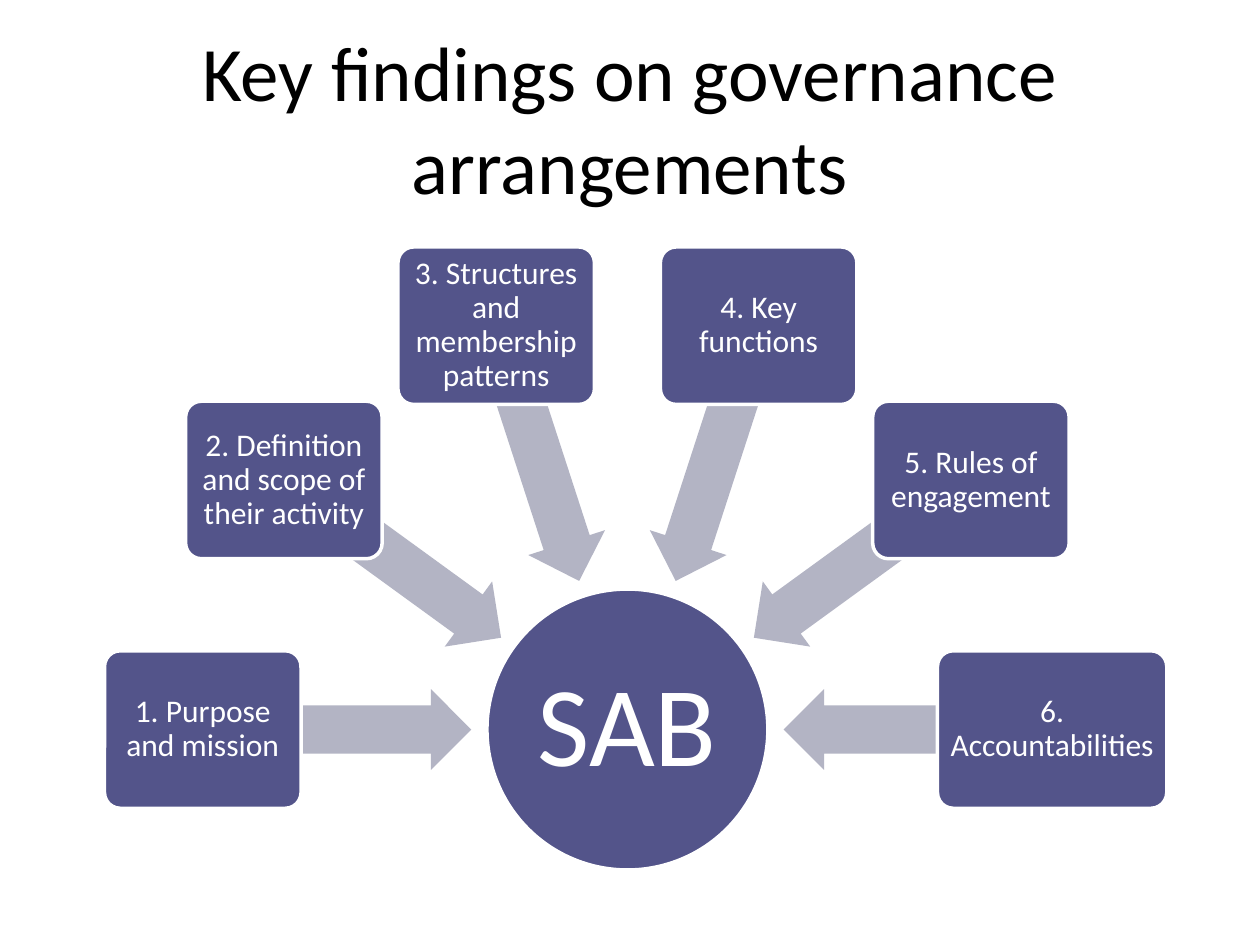
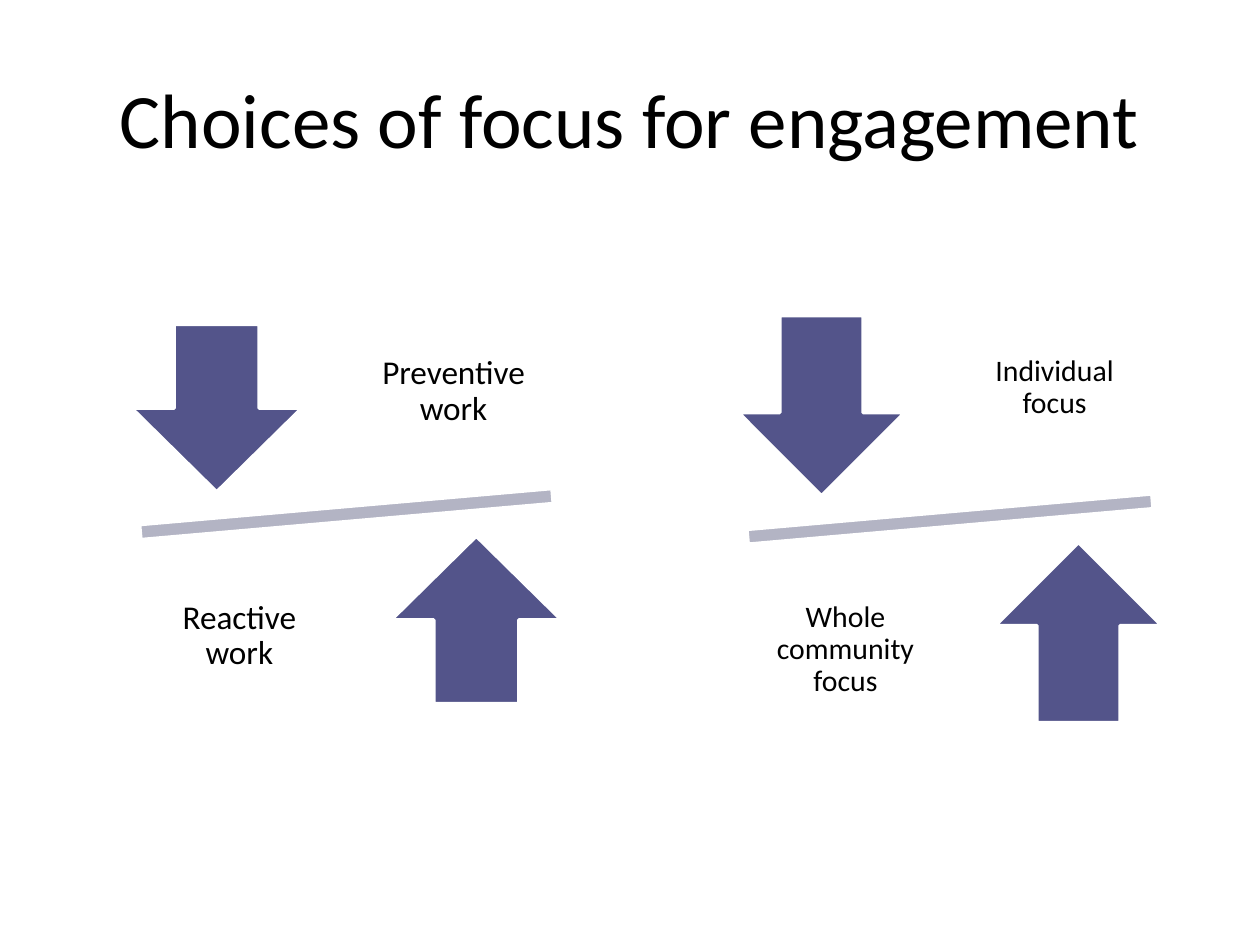
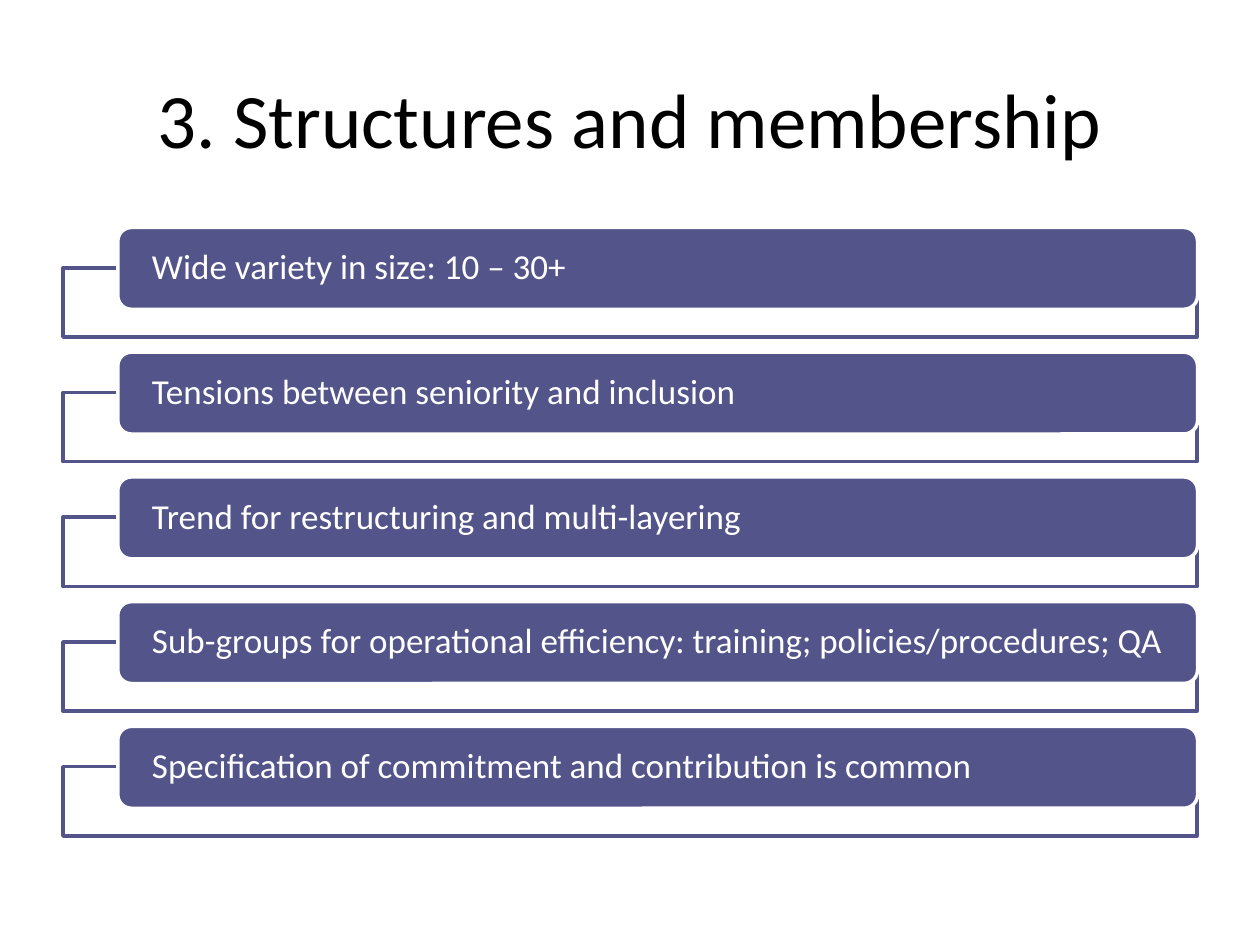
from dataclasses import dataclass
from math import cos, radians, sin

from lxml import etree
from pptx import Presentation
from pptx.dml.color import RGBColor
from pptx.enum import shapes, text
from pptx.oxml.ns import qn
from pptx.util import Inches, Pt

KIND = shapes.MSO_SHAPE


@dataclass(frozen=True)
class Theme:
    font: str = "Calibri"
    ink: str = "000000"
    paper: str = "FFFFFF"
    main: str = "53548A"
    soft: str = "B3B4C4"
    title: int = 44
    hub: int = 65
    finding: int = 18
    row: int = 20
    outline: int = 2


class Deck:
    def __init__(self, theme):
        self.theme = theme
        self.prs = Presentation()
        self.prs.slide_width, self.prs.slide_height = Inches(10), Inches(7.5)
        self.slide = None

    def new_slide(self, title):
        self.slide = self.prs.slides.add_slide(self.prs.slide_layouts[6])
        self.label(title, (5, 0.93), (9, 1.25), self.theme.title, inset=(0.1, 0.05), spacing=1)

    def place(self, centre, size):
        left, top = (c - s / 2 for c, s in zip(centre, size))
        return [Inches(v) for v in (left, top, *size)]

    def set_words(self, frame, words, size, color, inset, spacing=0.9, align=text.PP_ALIGN.CENTER):
        side, edge = map(Inches, inset)
        frame_format = {
            "word_wrap": True,
            "vertical_anchor": text.MSO_ANCHOR.MIDDLE,
            "margin_left": side,
            "margin_right": side,
            "margin_top": edge,
            "margin_bottom": edge,
        }
        for name, value in frame_format.items():
            setattr(frame, name, value)
        paragraph = frame.paragraphs[0]
        paragraph.alignment, paragraph.line_spacing = align, spacing
        run = paragraph.add_run()
        run.text = words
        for name, value in {"name": self.theme.font, "size": Pt(size)}.items():
            setattr(run.font, name, value)
        run.font.color.rgb = RGBColor.from_string(color)

    def label(self, words, centre, size, points, inset, spacing=0.9):
        box = self.slide.shapes.add_textbox(*self.place(centre, size))
        self.set_words(box.text_frame, words, points, self.theme.ink, inset, spacing)

    def shape(self, kind, centre, size, fill, line=None, adjust=(), turn=0, opacity=None):
        item = self.slide.shapes.add_shape(kind, *self.place(centre, size))
        item.shadow.inherit = False
        item.rotation = turn
        for index, value in enumerate(adjust):
            item.adjustments[index] = value
        item.fill.solid()
        item.fill.fore_color.rgb = RGBColor.from_string(fill)
        if opacity is not None:
            color = item.element.spPr.find(qn("a:solidFill"))[0]
            etree.SubElement(color, qn("a:alpha"), val=str(opacity * 1000))
        if line:
            item.line.color.rgb = RGBColor.from_string(line)
            item.line.width = Pt(self.theme.outline)
        else:
            item.line.fill.background()
        return item

    def panel(self, kind, centre, size, words, points, inset, adjust=(), align=text.PP_ALIGN.CENTER):
        item = self.shape(kind, centre, size, self.theme.main, self.theme.paper, adjust)
        self.set_words(item.text_frame, words, points, self.theme.paper, inset, align=align)

    def findings(self, hub, names):
        t = self.theme
        middle = (4.98, 5.79)
        self.panel(KIND.OVAL, middle, (2.23, 2.23), hub, t.hub, (0.05, 0.05))
        step = 180 / (len(names) - 1)
        for index, (name, width) in enumerate(names):
            angle = 180 + index * step

            def spoke(radius):
                return (middle[0] + radius * cos(radians(angle)),
                        middle[1] + radius * sin(radians(angle)))

            self.shape(KIND.LEFT_ARROW, spoke(2.31), (2.14, 0.64), t.soft,
                       adjust=(0.6, 0.5), turn=angle % 360)
            self.panel(KIND.ROUNDED_RECTANGLE, spoke(3.37), (width, 1.25), name,
                       t.finding, (0.04, 0.04), adjust=(0.1,))

    def balance(self, pivot, beam, arrow, arrow_offset, upper, lower,
                label_size, label_offset, points, inset):
        t = self.theme

        def around(offset, across, down):
            return pivot[0] + across * offset[0], pivot[1] + down * offset[1]

        self.shape(KIND.MATH_MINUS, pivot, beam, t.soft, t.paper, turn=355)
        for kind, words, side in ((KIND.DOWN_ARROW, upper, -1), (KIND.UP_ARROW, lower, 1)):
            self.shape(kind, around(arrow_offset, side, side), arrow, t.main, t.paper)
            self.label(words, around(label_offset, -side, side), label_size, points, (inset, inset))

    def rows(self, lines):
        t = self.theme
        for index, line in enumerate(lines):
            middle = 2.13 + index * 0.99
            self.shape(KIND.RECTANGLE, (5, middle + 0.27), (9, 0.55), t.paper, t.main, opacity=90)
            self.panel(KIND.ROUNDED_RECTANGLE, (5.22, middle), (8.57, 0.65), line, t.row,
                       (0.24, 0), align=text.PP_ALIGN.LEFT)


def main():
    deck = Deck(Theme())

    deck.new_slide("Key findings on governance arrangements")
    deck.findings("SAB", [
        ("1. Purpose and mission", 1.56),
        ("2. Definition and scope of their activity", 1.56),
        ("3. Structures and membership patterns", 1.56),
        ("4. Key functions", 1.56),
        ("5. Rules of engagement", 1.56),
        ("6. Accountabilities", 1.82),
    ])

    deck.new_slide("Choices of focus for engagement")
    deck.balance(pivot=(2.75, 4.08), beam=(4.47, 0.51), arrow=(1.35, 1.33),
                 arrow_offset=(1.03, 0.84), upper="Preventive work", lower="Reactive work",
                 label_size=(1.44, 1.4), label_offset=(0.85, 0.97), points=19, inset=0.15)
    deck.balance(pivot=(7.54, 4.12), beam=(4.39, 0.5), arrow=(1.32, 1.43),
                 arrow_offset=(1.02, 0.9), upper="Individual focus", lower="Whole community focus",
                 label_size=(1.41, 1.5), label_offset=(0.83, 1.04), points=17, inset=0.13)

    deck.new_slide("3. Structures and membership")
    deck.rows([
        "Wide variety in size: 10 – 30+",
        "Tensions between seniority and inclusion",
        "Trend for restructuring and multi-layering",
        "Sub-groups for operational efficiency: training; policies/procedures; QA",
        "Specification of commitment and contribution is common",
    ])

    deck.prs.save("out.pptx")


if __name__ == "__main__":
    main()
